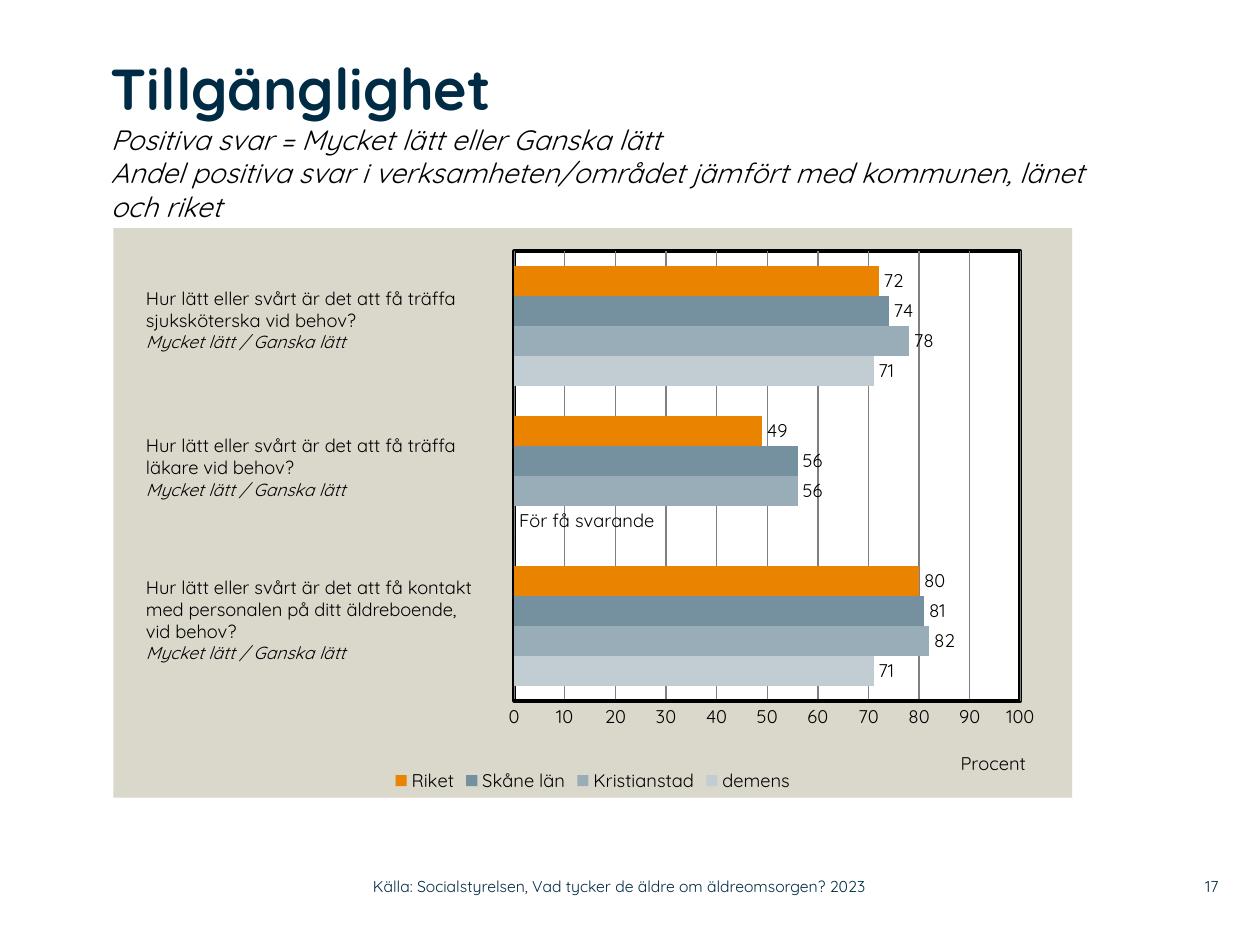
from lxml.etree import SubElement
from pptx import Presentation
from pptx.chart.data import CategoryChartData
from pptx.dml.color import RGBColor
from pptx.enum.chart import XL_CHART_TYPE, XL_LABEL_POSITION, XL_LEGEND_POSITION, XL_TICK_MARK
from pptx.enum.text import MSO_ANCHOR, MSO_AUTO_SIZE, PP_ALIGN
from pptx.oxml.ns import qn
from pptx.util import Inches, Pt

CELL = Inches(0.1)
FACE = "Quicksand"
NAVY, BLACK, WHITE, GREY, SAND = "002B45", "000000", "FFFFFF", "808080", "DAD7CB"
ASK = dict(size=Pt(10.5), name=FACE, hue=BLACK)
REPLY = dict(ASK, size=Pt(10), italic=True)
HEAD = dict(size=Pt(33), name=FACE, bold=True, hue=NAVY)
LEAD = dict(size=Pt(16), name=FACE, bold=False, italic=True, hue=BLACK)
FOOT = dict(size=Pt(9), name=FACE, hue=NAVY)
FLUSH = dict(margin_left=0, margin_right=0, margin_top=0, margin_bottom=0)
MID = dict(FLUSH, vertical_anchor=MSO_ANCHOR.MIDDLE)
SERIES = [
    ("demens", (71, 0, 71), "C2CDD3"),
    ("Kristianstad", (82, 56, 78), "99ADB9"),
    ("Skåne län", (81, 56, 74), "75909F"),
    ("Riket", (80, 49, 72), "E98300"),
]
ASKED = [
    (22.3, 29.9, ["Hur lätt eller svårt är det att få träffa sjuksköterska vid behov?"]),
    (34, 29.3, ["Hur lätt eller svårt är det att få träffa", "läkare vid behov?"]),
    (45.2, 30.1, ["Hur lätt eller svårt är det att få kontakt",
                  "med personalen på ditt äldreboende,", "vid behov?"]),
]


def grid(*cells):
    return [int(n * CELL) for n in cells]


def tint(code):
    return RGBColor.from_string(code)


def apply(item, form):
    for key, val in form.items():
        if key == "hue":
            item.color.rgb = tint(val)
        else:
            setattr(item, key, val)


def paint(fill, code):
    fill.solid()
    fill.fore_color.rgb = tint(code)


def stroke(line, code, width):
    line.color.rgb = tint(code)
    line.width = Pt(width)


def write(para, text, form):
    run = para.add_run()
    run.text = text
    apply(run.font, form)


def add_text(slide, spot, lines, frame=None, align=PP_ALIGN.LEFT):
    box = slide.shapes.add_textbox(*grid(*spot)).text_frame
    apply(box, dict(word_wrap=True, **(frame or {})))
    for row, (text, form) in enumerate(lines):
        para = box.add_paragraph() if row else box.paragraphs[0]
        para.alignment = align
        write(para, text, form)


def add_title(slide, spot, head, leads):
    title = slide.shapes.title
    apply(title, dict(zip(("left", "top", "width", "height"), grid(*spot))))
    frame = title.text_frame
    apply(frame, dict(FLUSH, word_wrap=True, vertical_anchor=MSO_ANCHOR.TOP,
                      auto_size=MSO_AUTO_SIZE.NONE))
    para = frame.paragraphs[0]
    para.alignment = PP_ALIGN.LEFT
    write(para, head, HEAD)
    for lead in leads:
        para.add_line_break()
        write(para, lead, LEAD)


def place(part, before, **shares):
    for old in part.findall(qn("c:layout")):
        part.remove(old)
    layout = SubElement(part, qn("c:layout"))
    manual = SubElement(layout, qn("c:manualLayout"))
    for tag, val in shares.items():
        SubElement(manual, qn("c:" + tag)).set("val", str(val))
    part.find(qn(before)).addprevious(layout)


def frame_plot(chart):
    area = chart.plots[0]._element.getparent()
    place(area, "c:barChart", layoutTarget="inner", xMode="edge", yMode="edge",
          x=0.418, y=0.041, w=0.528, h=0.789)
    for host, code in ((area, WHITE), (chart._chartSpace, SAND)):
        look = SubElement(host, qn("c:spPr"))
        fill = SubElement(look, qn("a:solidFill"))
        SubElement(fill, qn("a:srgbClr")).set("val", code)
        line = SubElement(look, qn("a:ln"))
        if host is area:
            line.set("w", str(Pt(2.25)))
            fill = SubElement(line, qn("a:solidFill"))
            SubElement(fill, qn("a:srgbClr")).set("val", BLACK)
        else:
            SubElement(line, qn("a:noFill"))
            chart._chartSpace.find(qn("c:chart")).addnext(look)


def style_scale(chart):
    chart.category_axis.visible = False
    axis = chart.value_axis
    apply(axis, dict(minimum_scale=0, maximum_scale=100, major_unit=10,
                     major_tick_mark=XL_TICK_MARK.NONE,
                     minor_tick_mark=XL_TICK_MARK.NONE, has_major_gridlines=True))
    stroke(axis.format.line, BLACK, 2)
    stroke(axis.major_gridlines.format.line, GREY, 0.75)
    title = axis.axis_title
    write(title.text_frame.paragraphs[0], "Procent", dict(ASK, bold=False))
    place(title._element, "c:overlay", xMode="edge", yMode="edge", x=0.88, y=0.91)


def style_bars(chart):
    apply(chart.plots[0], dict(gap_width=100, overlap=0, vary_by_categories=False))
    for bars, (_, _, code) in zip(chart.plots[0].series, SERIES):
        paint(bars.format.fill, code)
        bars.invert_if_negative = False
        apply(bars.data_labels, dict(show_value=True, position=XL_LABEL_POSITION.OUTSIDE_END))
        apply(bars.data_labels.font, ASK)
        for spot, val in enumerate(bars.values):
            if not val:
                label = bars.points[spot].data_label
                write(label.text_frame.paragraphs[0], "För få svarande", ASK)
                label.position = XL_LABEL_POSITION.OUTSIDE_END


def add_bars(slide, spot):
    data = CategoryChartData()
    data.categories = ["1", "2", "3"]
    for name, vals, _ in SERIES:
        data.add_series(name, vals)
    chart = slide.shapes.add_chart(XL_CHART_TYPE.BAR_CLUSTERED, *grid(*spot), data).chart
    apply(chart, dict(has_title=False, has_legend=True))
    apply(chart.font, ASK)
    apply(chart.legend, dict(position=XL_LEGEND_POSITION.BOTTOM, include_in_layout=False))
    apply(chart.legend.font, ASK)
    style_scale(chart)
    style_bars(chart)
    frame_plot(chart)


def main():
    deck = Presentation()
    apply(deck, dict(zip(("slide_width", "slide_height"), grid(100, 75))))
    slide = deck.slides.add_slide(deck.slide_layouts[5])
    add_bars(slide, (9, 18.1, 76.1, 45.2))
    add_title(slide, (8.8, 4.2, 77.7, 13.9), "Tillgänglighet", [
        "Positiva svar = Mycket lätt eller Ganska lätt",
        "Andel positiva svar i verksamheten/området jämfört med kommunen, länet och riket",
    ])
    for top, width, lines in ASKED:
        rows = [(line, ASK) for line in lines] + [("Mycket lätt / Ganska lätt", REPLY)]
        add_text(slide, (10.6, top, width, 8.1), rows)
    add_text(slide, (92, 68.9, 4.7, 2.9), [("17", FOOT)], MID, PP_ALIGN.RIGHT)
    source = "Källa: Socialstyrelsen, Vad tycker de äldre om äldreomsorgen? 2023"
    add_text(slide, (29.6, 68.9, 44.3, 2.9), [(source, FOOT)], MID)
    deck.save("out.pptx")


if __name__ == "__main__":
    main()
